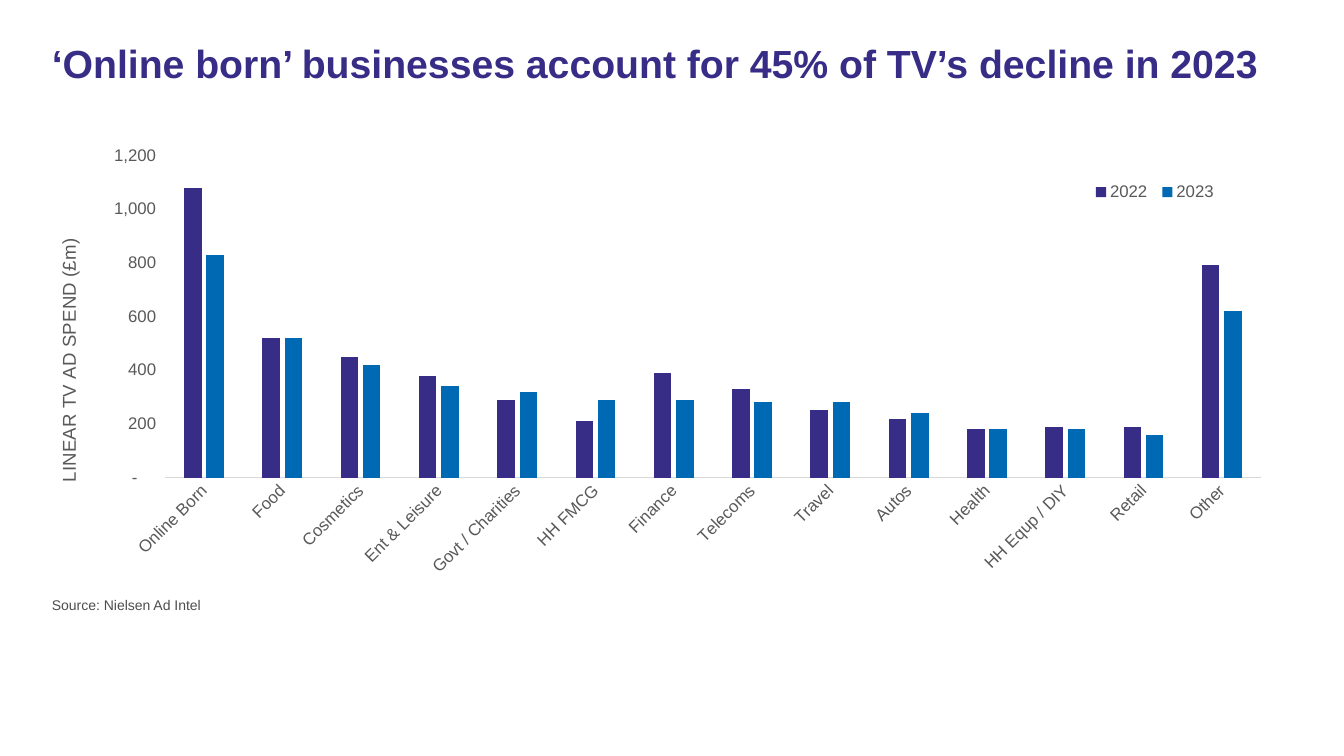
from lxml.etree import SubElement
from pptx import Presentation
from pptx.chart.data import CategoryChartData
from pptx.dml.color import RGBColor
from pptx.enum.chart import XL_CHART_TYPE, XL_LEGEND_POSITION, XL_TICK_MARK
from pptx.oxml.ns import qn
from pptx.util import Pt

PX = 9525
CHART_FRAME = (50, 132, 1154, 436)
SPEND = [
    ("Online Born", 1080, 830),
    ("Food", 520, 520),
    ("Cosmetics", 450, 420),
    ("Ent & Leisure", 380, 340),
    ("Govt / Charities", 290, 320),
    ("HH FMCG", 210, 290),
    ("Finance", 390, 290),
    ("Telecoms", 330, 280),
    ("Travel", 250, 280),
    ("Autos", 220, 240),
    ("Health", 180, 180),
    ("HH Equp / DIY", 190, 180),
    ("Retail", 190, 160),
    ("Other", 790, 620),
]
NUMBER_FORMAT = '_-* #,##0_-;\\-* #,##0_-;_-* "-"??_-;_-@_'


def color(value):
    return RGBColor.from_string(value)


def set_font(font, size, fill, bold=False):
    font.name = "Arial"
    font.size = Pt(size)
    font.bold = bold
    font.color.rgb = color(fill)


def add_text(page, text, *, frame, size, fill, bold=False, line_spacing=None):
    box = page.shapes.add_textbox(*(n * PX for n in frame))
    box.text_frame.word_wrap = True
    para = box.text_frame.paragraphs[0]
    para.line_spacing = line_spacing
    span = para.add_run()
    span.text = text
    set_font(span.font, size, fill, bold)


def place(part, index, position, target=None):
    for old in part.findall(qn("c:layout")):
        part.remove(old)
    layout = part.makeelement(qn("c:layout"))
    part.insert(index, layout)
    manual = SubElement(layout, qn("c:manualLayout"))
    if target:
        SubElement(manual, qn("c:layoutTarget")).set("val", target)
    for side in ("x", "y"):
        SubElement(manual, qn(f"c:{side}Mode")).set("val", "edge")
    width, height = CHART_FRAME[2:]
    for name, length, whole in zip("xywh", position, (width, height) * 2):
        SubElement(manual, qn(f"c:{name}")).set("val", str(length / whole))


def style_axis(axis):
    axis.has_major_gridlines = False
    axis.major_tick_mark = XL_TICK_MARK.NONE
    axis.minor_tick_mark = XL_TICK_MARK.NONE
    set_font(axis.tick_labels.font, 12, "595959")


def rotate(body, degrees):
    body.set("rot", str(degrees * 60000))
    body.set("vert", "horz")


def add_spend_chart(page):
    categories, before, after = zip(*SPEND)
    data = CategoryChartData()
    data.categories = categories
    data.add_series("2022", before)
    data.add_series("2023", after)
    chart = page.shapes.add_chart(
        XL_CHART_TYPE.COLUMN_CLUSTERED, *(n * PX for n in CHART_FRAME), data
    ).chart
    chart.has_title = False
    set_font(chart.font, 10, "000000")

    plot = chart.plots[0]
    plot.gap_width = 219
    plot.overlap = -27
    plot.vary_by_categories = False
    for series, fill in zip(plot.series, ("372D87", "0069B4")):
        series.format.fill.solid()
        series.format.fill.fore_color.rgb = color(fill)

    category_axis, value_axis = chart.category_axis, chart.value_axis
    style_axis(category_axis)
    category_axis.format.line.color.rgb = color("D9D9D9")
    category_axis.format.line.width = Pt(0.75)
    style_axis(value_axis)
    value_axis.format.line.fill.background()
    value_axis.minimum_scale = 0
    value_axis.maximum_scale = 1200
    value_axis.major_unit = 200
    value_axis.tick_labels.number_format = NUMBER_FORMAT
    value_axis.tick_labels.number_format_is_linked = False
    title_frame = value_axis.axis_title.text_frame
    title_frame.text = "LINEAR TV AD SPEND (£m)"
    set_font(title_frame.paragraphs[0].runs[0].font, 13.3, "595959")

    chart.has_legend = True
    chart.legend.position = XL_LEGEND_POSITION.BOTTOM
    chart.legend.include_in_layout = False
    set_font(chart.legend.font, 12, "595959")

    area = chart._chartSpace.find(".//" + qn("c:plotArea"))
    legend = chart._chartSpace.find(".//" + qn("c:legend"))
    axis_title = area.find(qn("c:valAx") + "/" + qn("c:title"))
    labels = area.find(qn("c:catAx") + "/" + qn("c:txPr"))
    place(area, 0, (107, 16, 1044, 307), "inner")
    place(legend, 1, (985, 36, 130, 30))
    place(axis_title, 1, (1, 92))
    rotate(axis_title.find(".//" + qn("a:bodyPr")), -90)
    rotate(labels.find(qn("a:bodyPr")), -45)


def main():
    deck = Presentation()
    deck.slide_width = 1280 * PX
    deck.slide_height = 720 * PX
    page = deck.slides.add_slide(deck.slide_layouts[6])
    add_text(
        page,
        "‘Online born’ businesses account for 45% of TV’s decline in 2023",
        frame=(40, 38, 1208, 108),
        size=28,
        fill="372D87",
        bold=True,
        line_spacing=0.9,
    )
    add_text(
        page,
        "Source: Nielsen Ad Intel",
        frame=(40, 563, 1190, 32),
        size=10,
        fill="4D4D4D",
    )
    add_spend_chart(page)
    deck.save("out.pptx")


if __name__ == "__main__":
    main()
